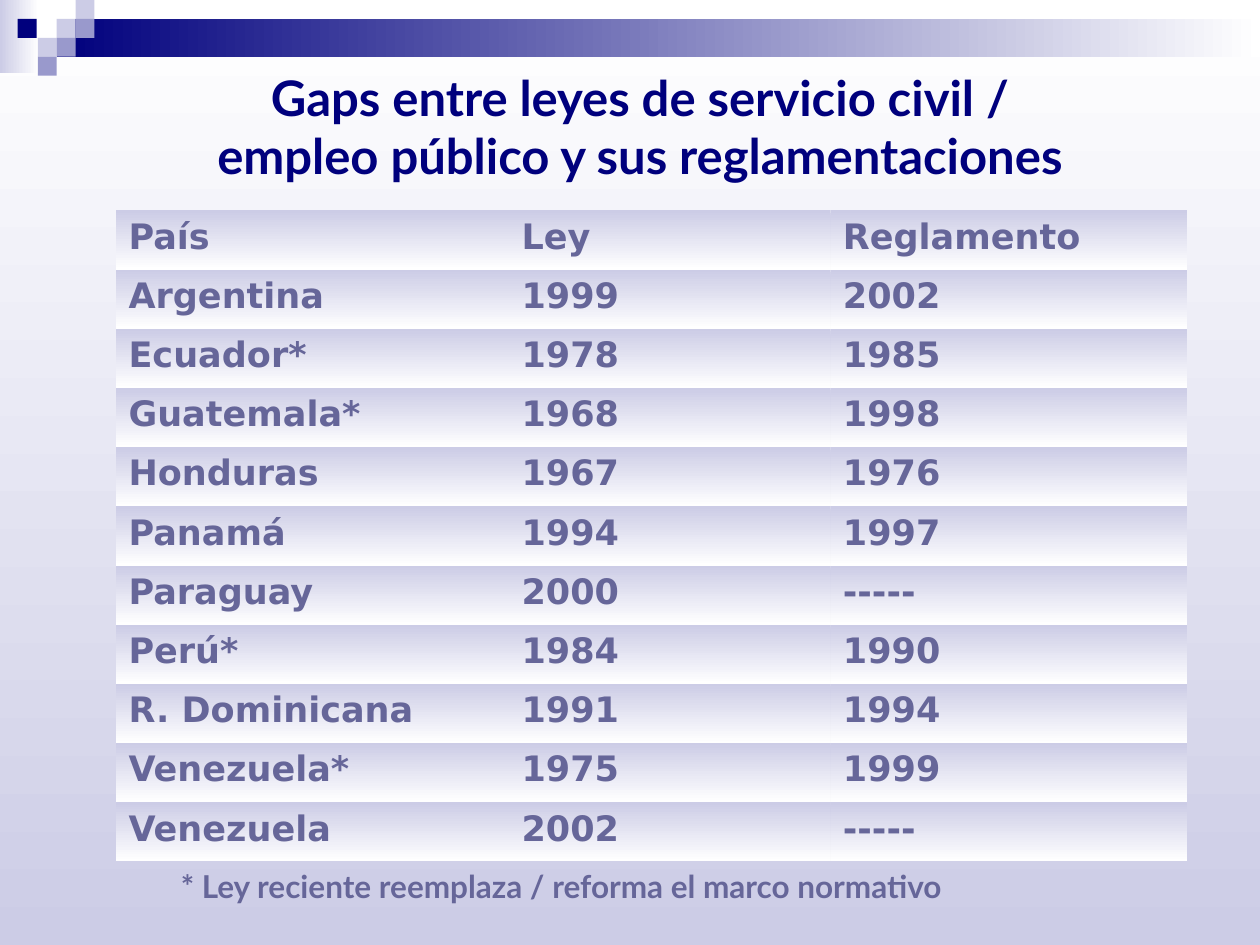
import pptx
import pptx.dml.color
import pptx.enum.shapes
import pptx.enum.text
import pptx.oxml.ns
import pptx.util

Inches = pptx.util.Inches
ALIGN = pptx.enum.text.PP_ALIGN
ANCHOR = pptx.enum.text.MSO_ANCHOR

COLORS = {
    "navy": "00007D",
    "slate": "666699",
    "violet": "9999CC",
    "lavender": "CCCCE6",
    "white": "FFFFFF",
}
NO_STYLE_NO_GRID = "{2D5ABB26-0587-4C30-8999-92F81FD0307C}"

ROWS = [
    ("País", "Ley", "Reglamento"),
    ("Argentina", "1999", "2002"),
    ("Ecuador*", "1978", "1985"),
    ("Guatemala*", "1968", "1998"),
    ("Honduras", "1967", "1976"),
    ("Panamá", "1994", "1997"),
    ("Paraguay", "2000", "-----"),
    ("Perú*", "1984", "1990"),
    ("R. Dominicana", "1991", "1994"),
    ("Venezuela*", "1975", "1999"),
    ("Venezuela", "2002", "-----"),
]


def rgb(name):
    return pptx.dml.color.RGBColor.from_string(COLORS[name])


def write(tf, text, size=20, font="Lato", color="slate", align=ALIGN.LEFT):
    """Put bold text in a text frame; a newline becomes a line break."""
    p = tf.paragraphs[0]
    p.alignment = align
    for i, line in enumerate(text.split("\n")):
        if i:
            p.add_line_break()
        r = p.add_run()
        r.text = line
        r.font.size = pptx.util.Pt(size)
        r.font.name = font
        r.font.bold = True
        r.font.color.rgb = rgb(color)


class Deck:
    def __init__(self, slide, font):
        self.s = slide
        self.font = font

    def paint(self, fill, *names, angle=0):
        """Solid fill for one colour, linear gradient for two."""
        if len(names) == 1:
            fill.solid()
            fill.fore_color.rgb = rgb(names[0])
            return
        fill.gradient()
        fill.gradient_angle = angle
        for stop, name in zip(fill.gradient_stops, names):
            stop.color.rgb = rgb(name)

    def background(self, *names):
        self.paint(self.s.background.fill, *names, angle=270)

    def rect(self, x, y, w, h, *names):
        sp = self.s.shapes.add_shape(
            pptx.enum.shapes.MSO_SHAPE.RECTANGLE,
            Inches(x), Inches(y), Inches(w), Inches(h))
        sp.shadow.inherit = False
        sp.line.fill.background()
        self.paint(sp.fill, *names)

    def text(self, x, y, w, h, text, anchor=ANCHOR.TOP, **fmt):
        tf = self.s.shapes.add_textbox(
            Inches(x), Inches(y), Inches(w), Inches(h)).text_frame
        tf.word_wrap = True
        tf.vertical_anchor = anchor
        write(tf, text, **fmt)

    def table(self, x, y, widths, height, rows):
        table = self.s.shapes.add_table(
            len(rows), len(widths), Inches(x), Inches(y),
            Inches(sum(widths)), Inches(height)).table
        table.first_row = table.horz_banding = False
        style = table._tbl.tblPr.find(pptx.oxml.ns.qn("a:tableStyleId"))
        style.text = NO_STYLE_NO_GRID
        for column, width in zip(table.columns, widths):
            column.width = Inches(width)
        for r, row in enumerate(rows):
            for c, value in enumerate(row):
                cell = table.cell(r, c)
                self.paint(cell.fill, "lavender", "white", angle=270)
                write(cell.text_frame, value, font=self.font)


def main():
    prs = pptx.Presentation()
    prs.slide_width, prs.slide_height = Inches(10), Inches(7.5)
    deck = Deck(prs.slides.add_slide(prs.slide_layouts[6]), "DejaVu Sans")

    # Background and top band
    deck.background("white", "lavender")
    deck.rect(0, 0, 0.31, 0.58, "lavender", "white")
    deck.rect(0.45, 0.15, 9.55, 0.3, "navy", "white")

    # Corner mosaic
    side = 0.15
    for x, y, color in [
        (0.45, 0.15, "lavender"), (0.6, 0, "lavender"),
        (0.6, 0.15, "violet"), (0.3, 0.3, "lavender"),
        (0.14, 0.15, "navy"), (0.45, 0.3, "violet"),
        (0.3, 0.45, "violet"),
    ]:
        deck.rect(x, y, side, side, color)

    # Title
    deck.text(0.75, 0.5, 8.75, 1,
              "Gaps entre leyes de servicio civil / \n"
              "empleo público y sus reglamentaciones ",
              anchor=ANCHOR.MIDDLE, size=28, color="navy", align=ALIGN.CENTER)

    # Laws by country, with the footnote below
    deck.table(0.92, 1.67, [3.12, 2.55, 2.83], 5.17, ROWS)
    deck.text(0.83, 6.83, 7.25, 0.4,
              "* Ley reciente reemplaza / reforma el marco normativo",
              size=18, align=ALIGN.CENTER)

    prs.save("out.pptx")


if __name__ == "__main__":
    main()
